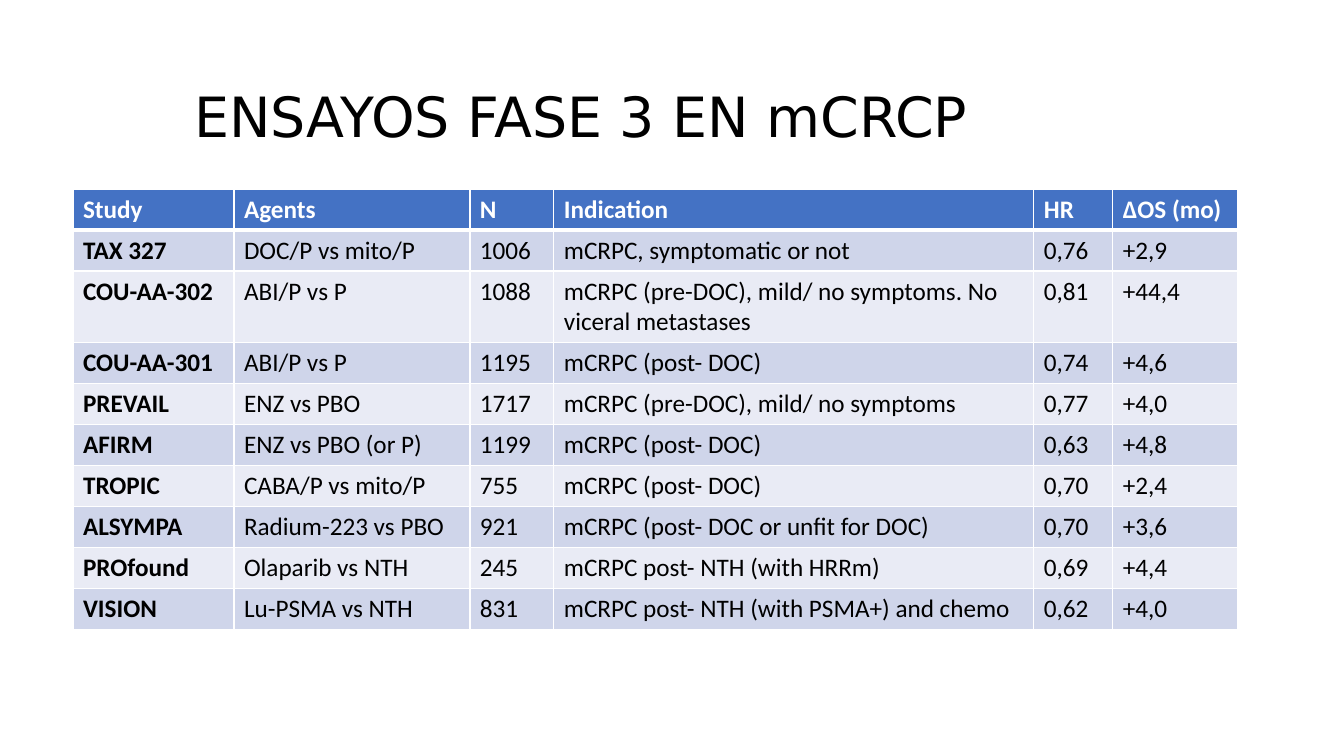
from lxml.etree import SubElement
from pptx import Presentation
from pptx.dml.color import RGBColor
from pptx.enum.text import MSO_ANCHOR as Anchor, MSO_AUTO_SIZE as AutoSize, PP_ALIGN as Align
from pptx.oxml.ns import qn
from pptx.util import Inches, Pt

PX = Inches(1) / 100.8
COLORS = {
    "white": "FFFFFF",
    "black": "000000",
    "header": "4472C4",
    "odd_row": "CFD5EA",
    "even_row": "E9EBF5",
}
TITLE = "ENSAYOS FASE 3 EN mCRCP"
TITLE_BOX = (184, 101, 1064, 38)
TABLE_BOX = (73, 189, 1165, 440)
COLUMN_WIDTHS = (161, 236, 84, 480, 79, 125)
ROW_HEIGHT = 41
TRIALS = [
    ("Study", "Agents", "N", "Indication", "HR", "∆OS (mo)"),
    ("TAX 327", "DOC/P vs mito/P", "1006", "mCRPC, symptomatic or not", "0,76", "+2,9"),
    ("COU-AA-302", "ABI/P vs P", "1088",
     "mCRPC (pre-DOC), mild/ no symptoms. No viceral metastases", "0,81", "+44,4"),
    ("COU-AA-301", "ABI/P vs P", "1195", "mCRPC (post- DOC)", "0,74", "+4,6"),
    ("PREVAIL", "ENZ vs PBO", "1717", "mCRPC (pre-DOC), mild/ no symptoms", "0,77", "+4,0"),
    ("AFIRM", "ENZ vs PBO (or P)", "1199", "mCRPC (post- DOC)", "0,63", "+4,8"),
    ("TROPIC", "CABA/P vs mito/P", "755", "mCRPC (post- DOC)", "0,70", "+2,4"),
    ("ALSYMPA", "Radium-223 vs PBO", "921", "mCRPC (post- DOC or unfit for DOC)", "0,70", "+3,6"),
    ("PROfound", "Olaparib vs NTH", "245", "mCRPC post- NTH (with HRRm)", "0,69", "+4,4"),
    ("VISION", "Lu-PSMA vs NTH", "831", "mCRPC post- NTH (with PSMA+) and chemo", "0,62", "+4,0"),
]


def px(length):
    """Turn a length in px into EMU."""
    return round(length * PX)


def set_font(para, name, size, color, bold=False):
    """Set the font of a whole paragraph."""
    font = para.font
    font.name, font.size, font.bold = name, Pt(size), bold
    font.color.rgb = RGBColor.from_string(COLORS[color])


def set_borders(cell, top, bottom):
    """Give a cell white borders, with top and bottom widths in points."""
    properties = cell._tc.get_or_add_tcPr()
    for side, width in (("L", 1), ("R", 1), ("T", top), ("B", bottom)):
        line = SubElement(properties, qn(f"a:ln{side}"), w=str(Pt(width)))
        fill = SubElement(line, qn("a:solidFill"))
        SubElement(fill, qn("a:srgbClr"), val=COLORS["white"])


def add_title(page, box):
    """Place the slide title in its box."""
    title = page.shapes.title
    title.left, title.top, title.width, title.height = map(px, box)
    frame = title.text_frame
    frame.text = TITLE
    frame.word_wrap = True
    frame.auto_size = AutoSize.NONE
    frame.vertical_anchor = Anchor.MIDDLE
    para = frame.paragraphs[0]
    para.alignment = Align.LEFT
    para.line_spacing = 0.9
    set_font(para, "DejaVu Sans", 39.6, "black")


def add_trials_table(page, box):
    """Place the table of trials in its box."""
    table = page.shapes.add_table(len(TRIALS), len(COLUMN_WIDTHS), *map(px, box)).table
    for column, width in zip(table.columns, COLUMN_WIDTHS):
        column.width = px(width)
    for row_index, trial in enumerate(TRIALS):
        table.rows[row_index].height = px(ROW_HEIGHT)
        is_header = row_index == 0
        fill = "header" if is_header else "odd_row" if row_index % 2 else "even_row"
        for column_index, text in enumerate(trial):
            cell = table.cell(row_index, column_index)
            set_borders(cell, 3 if row_index == 1 else 1, 3 if is_header else 1)
            cell.fill.solid()
            cell.fill.fore_color.rgb = RGBColor.from_string(COLORS[fill])
            cell.text = text
            set_font(cell.text_frame.paragraphs[0], "Calibri", 18,
                     "white" if is_header else "black", is_header or column_index == 0)


def main():
    """Build the deck and save it."""
    deck = Presentation()
    deck.slide_width, deck.slide_height = px(1344), px(756)
    page = deck.slides.add_slide(deck.slide_layouts[5])
    add_title(page, TITLE_BOX)
    add_trials_table(page, TABLE_BOX)
    deck.save("out.pptx")


if __name__ == "__main__":
    main()
